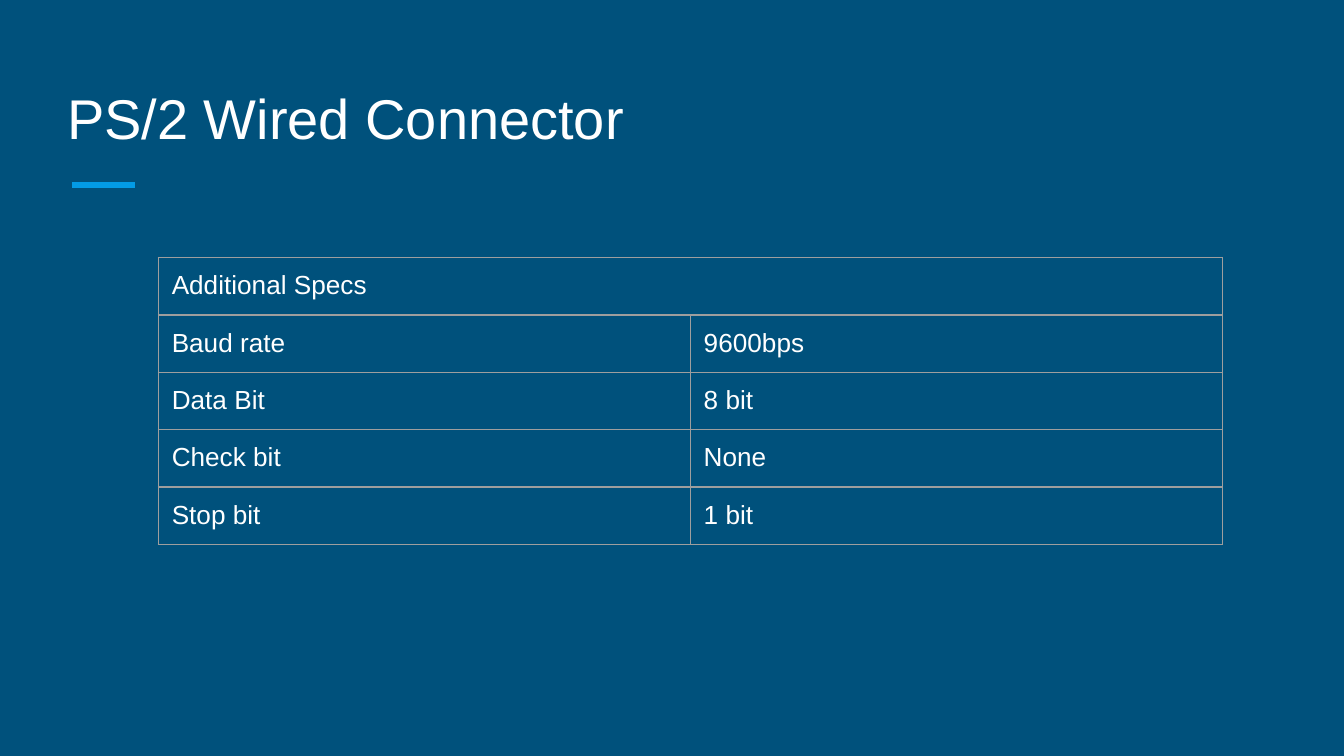
from lxml.etree import SubElement
from pptx import Presentation
from pptx.dml.color import RGBColor
from pptx.enum.shapes import MSO_CONNECTOR as Connector
from pptx.enum.text import MSO_ANCHOR as Anchor, MSO_AUTO_SIZE as AutoSize, PP_ALIGN as Align
from pptx.oxml.ns import qn
from pptx.util import Pt

NAVY = RGBColor(0x00, 0x51, 0x7C)
SKY = RGBColor(0x03, 0x9B, 0xE5)
GREY = RGBColor(0x9E, 0x9E, 0x9E)
WHITE = RGBColor(0xFF, 0xFF, 0xFF)

SPECS = [
    ("Baud rate", "9600bps"),
    ("Data Bit", "8 bit"),
    ("Check bit", "None"),
    ("Stop bit", "1 bit"),
]


class SlideBuilder:
    font = "Arial"
    title_size = 30
    table_size = 14
    cell_margin = Pt(7.2)
    border_width = Pt(0.75)

    def __init__(self, deck):
        self.page = deck.slides.add_slide(deck.slide_layouts[5])
        self.page.background.fill.solid()
        self.page.background.fill.fore_color.rgb = NAVY

    def style(self, para, size):
        para.alignment = Align.LEFT
        para.font.name = self.font
        para.font.size = Pt(size)
        para.font.color.rgb = WHITE

    def title(self, text, left, top, width, height):
        box = self.page.shapes.title
        box.left, box.top, box.width, box.height = Pt(left), Pt(top), Pt(width), Pt(height)
        frame = box.text_frame
        frame.text = text
        frame.word_wrap = True
        frame.auto_size = AutoSize.NONE
        frame.vertical_anchor = Anchor.TOP
        self.style(frame.paragraphs[0], self.title_size)

    def rule(self, left, top, width):
        line = self.page.shapes.add_connector(
            Connector.STRAIGHT, Pt(left), Pt(top), Pt(left + width), Pt(top))
        line.line.color.rgb = SKY
        line.line.width = Pt(3)
        SubElement(line._element.spPr, qn("a:effectLst"))

    def borders(self, cell):
        properties = cell._tc.get_or_add_tcPr()
        for side in ("a:lnL", "a:lnR", "a:lnT", "a:lnB"):
            edge = SubElement(properties, qn(side), w=str(self.border_width))
            fill = SubElement(edge, qn("a:solidFill"))
            SubElement(fill, qn("a:srgbClr"), val=str(GREY))

    def cell(self, cell, text):
        cell.text = text
        cell.margin_left = cell.margin_right = self.cell_margin
        cell.margin_top = cell.margin_bottom = self.cell_margin
        self.borders(cell)
        cell.fill.background()
        self.style(cell.text_frame.paragraphs[0], self.table_size)

    def table(self, heading, rows, left, top, width, row_height):
        count = len(rows) + 1
        table = self.page.shapes.add_table(
            count, 2, Pt(left), Pt(top), Pt(width), Pt(row_height * count)).table
        table.first_row = False
        table.horz_banding = False
        for row in table.rows:
            row.height = Pt(row_height)
        for row_index, texts in enumerate([(heading, ""), *rows]):
            for column_index, text in enumerate(texts):
                self.cell(table.cell(row_index, column_index), text)
        table.cell(0, 0).merge(table.cell(0, 1))


def main():
    deck = Presentation()
    deck.slide_width, deck.slide_height = Pt(720), Pt(405)
    slide = SlideBuilder(deck)
    slide.rule(38.6, 99.1, 33.6)
    slide.table("Additional Specs", SPECS, 84.8, 138, 570, 30.75)
    slide.title("PS/2 Wired Connector", 28.8, 41.2, 360, 77.8)
    deck.save("out.pptx")


if __name__ == "__main__":
    main()
